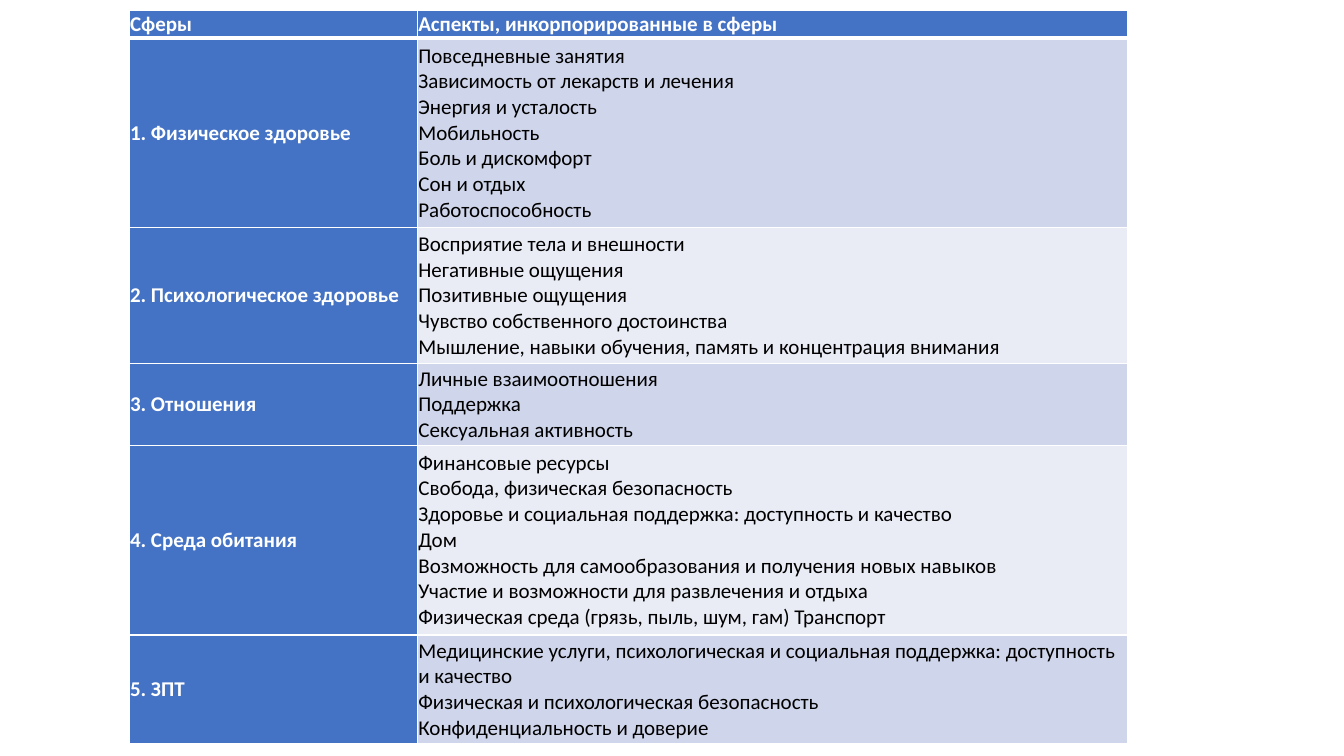
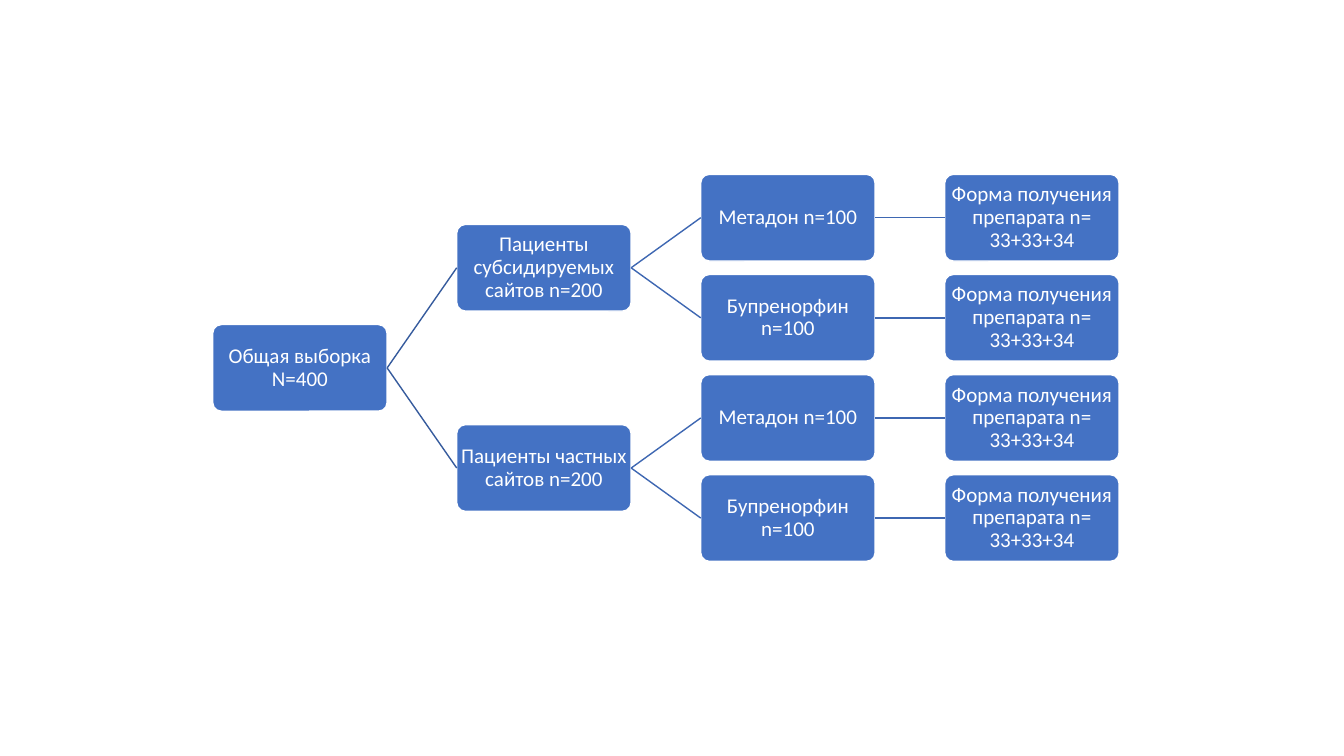
from lxml import etree
from pptx import Presentation
from pptx.dml.color import RGBColor
from pptx.enum.shapes import MSO_CONNECTOR as LINE, MSO_SHAPE as SHAPE
from pptx.enum.text import MSO_ANCHOR as ANCHOR, PP_ALIGN as ALIGN
from pptx.oxml.ns import qn
from pptx.util import Inches, Pt

COLORS = {
    "accent": "4472C4",
    "white": "FFFFFF",
    "black": "000000",
    "band_dark": "CFD5EA",
    "band_light": "E9EBF5",
    "root_link": "365B9D",
    "link": "3E67B2",
}

HEADER = ("Сферы", "Аспекты, инкорпорированные в сферы")
# Sphere, row height in inches, aspects
SPHERES = [
    ("1. Физическое здоровье", 1.88, [
        "Повседневные занятия",
        "Зависимость от лекарств и лечения",
        "Энергия и усталость",
        "Мобильность",
        "Боль и дискомфорт",
        "Сон и отдых",
        "Работоспособность",
    ]),
    ("2. Психологическое здоровье", 1.35, [
        "Восприятие тела и внешности",
        "Негативные ощущения",
        "Позитивные ощущения",
        "Чувство собственного достоинства",
        "Мышление, навыки обучения, память и концентрация внимания",
    ]),
    ("3. Отношения", 0.81, [
        "Личные взаимоотношения",
        "Поддержка",
        "Сексуальная активность",
    ]),
    ("4. Среда обитания", 1.88, [
        "Финансовые ресурсы",
        "Свобода, физическая безопасность",
        "Здоровье и социальная поддержка: доступность и качество",
        "Дом",
        "Возможность для самообразования и получения новых навыков",
        "Участие и возможности для развлечения и отдыха",
        "Физическая среда (грязь, пыль, шум, гам) Транспорт",
    ]),
    ("5. ЗПТ", 1.08, [
        "Медицинские услуги, психологическая и социальная поддержка: "
        "доступность и качество",
        "Физическая и психологическая безопасность",
        "Конфиденциальность и доверие",
    ]),
]

# Sample tree: (label, branches)
DOSAGE_FORM = ("Форма получения препарата n= 33+33+34", [])
DRUGS = [("Метадон n=100", [DOSAGE_FORM]), ("Бупренорфин n=100", [DOSAGE_FORM])]
SAMPLE = ("Общая выборка N=400", [
    ("Пациенты субсидируемых сайтов n=200", DRUGS),
    ("Пациенты частных сайтов n=200", DRUGS),
])


def rgb(color):
    return RGBColor.from_string(COLORS[color])


class Deck:
    font = "Calibri"
    size = Pt(15)
    inset = Inches(0.01)
    # Tree grid
    tree_left, tree_top = Inches(2.11), Inches(1.73)
    box_width, box_height = Inches(1.73), Inches(0.86)
    column_step, row_step = Inches(2.42), Inches(2.98) // 3

    def __init__(self):
        self.prs = Presentation()
        self.prs.slide_width, self.prs.slide_height = Inches(13.33), Inches(7.5)
        self.slide = None

    def add_slide(self):
        self.slide = self.prs.slides.add_slide(self.prs.slide_layouts[6])

    def style_text(self, frame, color, bold=False):
        for paragraph in frame.paragraphs:
            for run in paragraph.runs:
                run.font.name, run.font.size = self.font, self.size
                run.font.bold = bold
                run.font.color.rgb = rgb(color)

    def set_borders(self, cell, top=1, bottom=1):
        properties = cell._tc.get_or_add_tcPr()
        for side, width in (("L", 1), ("R", 1), ("T", top), ("B", bottom)):
            line = etree.SubElement(properties, qn(f"a:ln{side}"), w=str(Pt(width)))
            fill = etree.SubElement(line, qn("a:solidFill"))
            etree.SubElement(fill, qn("a:srgbClr"), val=COLORS["white"])

    def fill_cell(self, cell, text, fill, color="white", bold=True, **borders):
        cell.text_frame.text = text
        cell.vertical_anchor = ANCHOR.MIDDLE
        cell.margin_left = cell.margin_right = self.inset
        cell.margin_top = cell.margin_bottom = self.inset
        self.style_text(cell.text_frame, color, bold)
        self.set_borders(cell, **borders)
        cell.fill.solid()
        cell.fill.fore_color.rgb = rgb(fill)

    def add_spheres_table(self, header, spheres):
        table = self.slide.shapes.add_table(
            len(spheres) + 1, 2, Inches(1.28), Inches(0.1), Inches(9.9), Inches(7.28)
        ).table
        table.horz_banding = False
        table.columns[0].width, table.columns[1].width = Inches(2.86), Inches(7.04)
        table.rows[0].height = Inches(0.28)
        for column, title in enumerate(header):
            self.fill_cell(table.cell(0, column), title, "accent", bottom=3)
        for row, (sphere, height, aspects) in enumerate(spheres, start=1):
            table.rows[row].height = Inches(height)
            top = 3 if row == 1 else 1
            band = "band_dark" if row % 2 else "band_light"
            self.fill_cell(table.cell(row, 0), sphere, "accent", top=top)
            self.fill_cell(table.cell(row, 1), "\n".join(aspects), band,
                           "black", bold=False, top=top)

    def add_box(self, label, left, top):
        box = self.slide.shapes.add_shape(
            SHAPE.ROUNDED_RECTANGLE, left, top, self.box_width, self.box_height)
        box.adjustments[0] = 0.1
        box.shadow.inherit = False
        box.fill.solid()
        box.fill.fore_color.rgb = rgb("accent")
        box.line.color.rgb = rgb("white")
        box.line.width = Pt(1)
        frame = box.text_frame
        frame.text = label
        frame.word_wrap = True
        frame.vertical_anchor = ANCHOR.MIDDLE
        frame.margin_left = frame.margin_right = self.inset
        frame.margin_top = frame.margin_bottom = self.inset
        frame.paragraphs[0].alignment = ALIGN.CENTER
        frame.paragraphs[0].line_spacing = 0.9
        self.style_text(frame, "white")
        return box

    def add_link(self, parent, child, color):
        link = self.slide.shapes.add_connector(LINE.STRAIGHT, 0, 0, 0, 0)
        link.begin_connect(parent, 3)
        link.end_connect(child, 1)
        link.line.color.rgb = rgb(color)
        link.line.width = Pt(1)
        etree.SubElement(link._element.spPr, qn("a:effectLst"))

    def add_tree(self, node, level=0, first_row=0):
        """Draw a node centred on its branches; return its box and row count."""
        label, branches = node
        children, rows = [], 0
        for branch in branches:
            child, used = self.add_tree(branch, level + 1, first_row + rows)
            children.append(child)
            rows += used
        rows = max(rows, 1)
        middle_row = first_row + (rows - 1) / 2
        box = self.add_box(label, self.tree_left + level * self.column_step,
                           self.tree_top + int(middle_row * self.row_step))
        for child in children:
            self.add_link(box, child, "link" if level else "root_link")
        return box, rows


def main():
    deck = Deck()

    # Spheres and their aspects
    deck.add_slide()
    deck.add_spheres_table(HEADER, SPHERES)

    # Sample structure
    deck.add_slide()
    deck.add_tree(SAMPLE)

    deck.prs.save("out.pptx")


if __name__ == "__main__":
    main()
